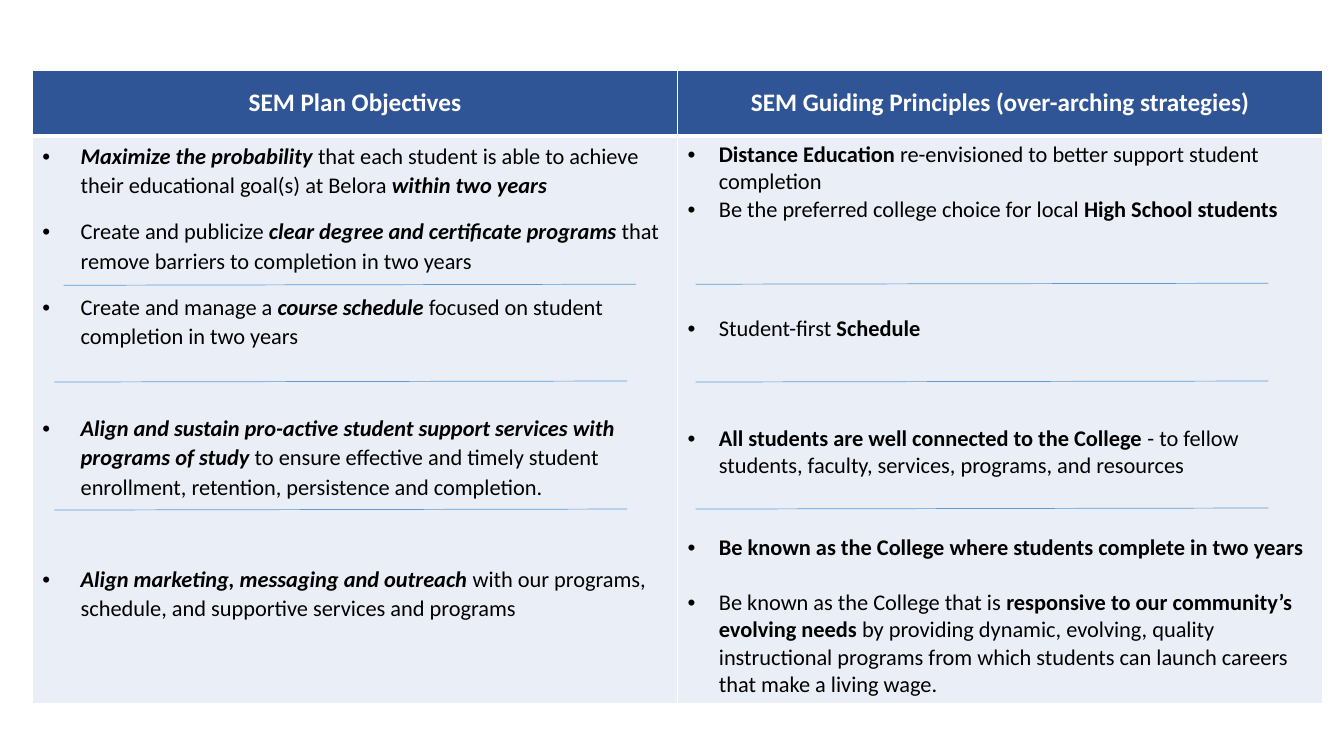
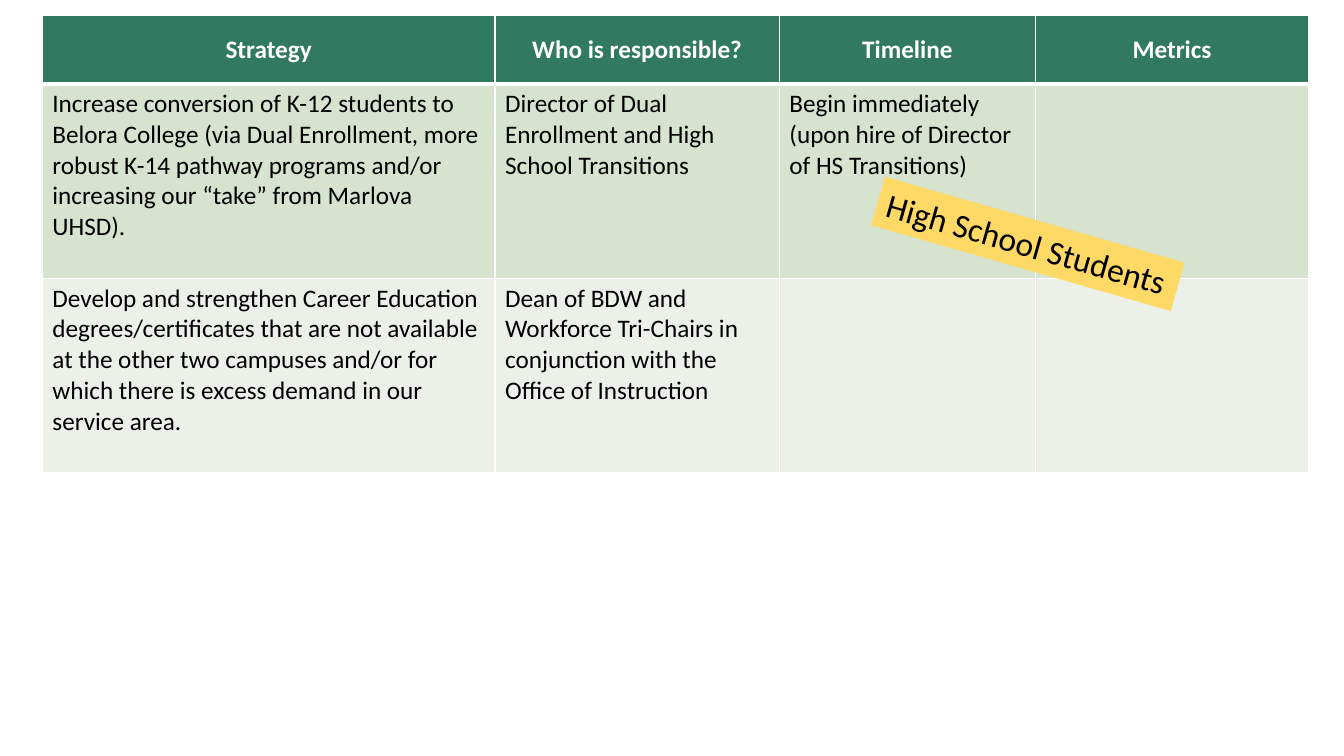
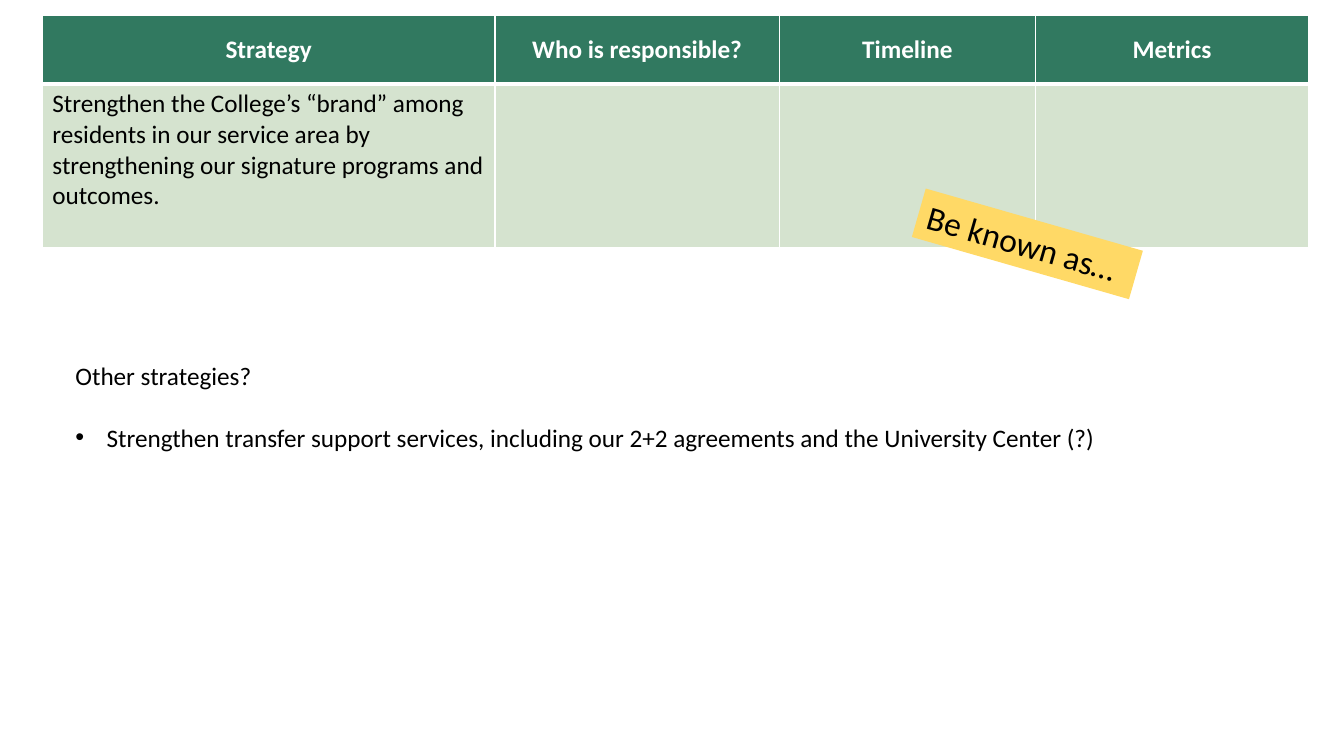
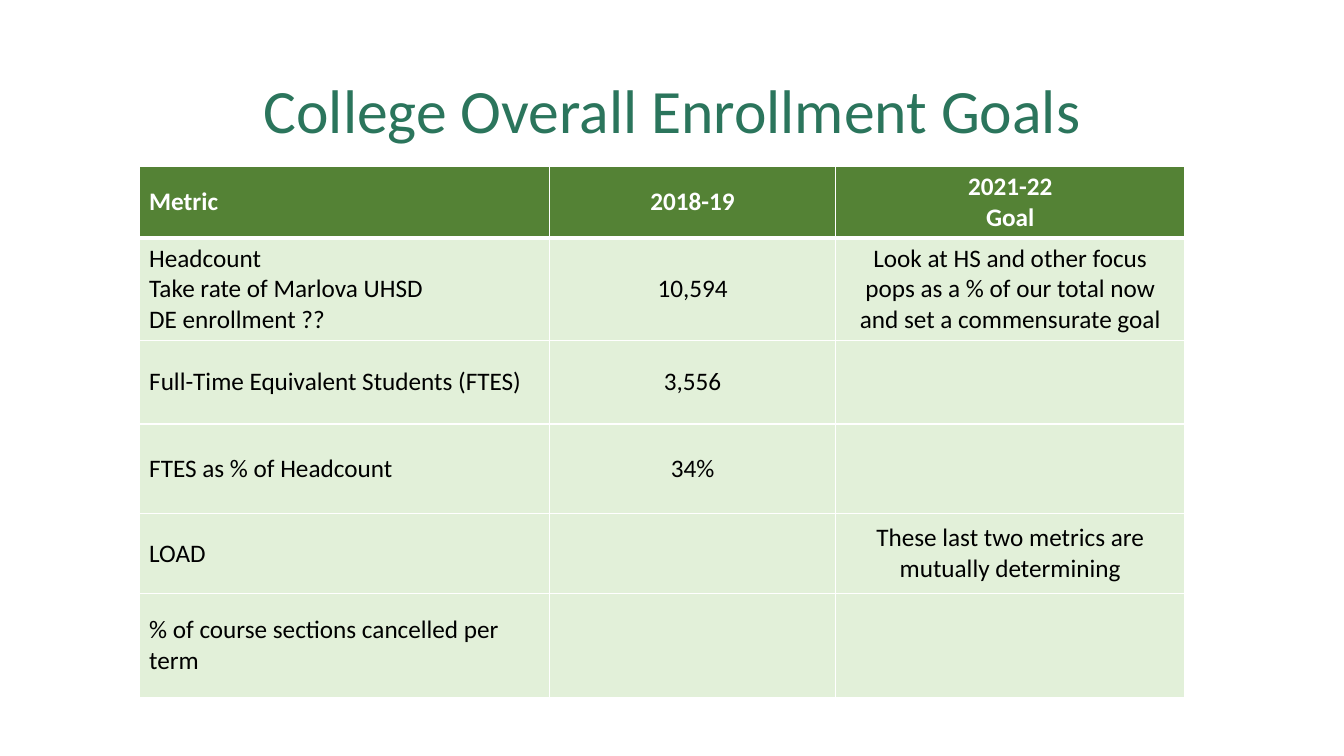
import dataclasses

import lxml.etree
import pptx
import pptx.dml.color
import pptx.enum.shapes
import pptx.enum.text
import pptx.oxml
import pptx.oxml.ns
import pptx.util

Inches = pptx.util.Inches
Pt = pptx.util.Pt
ALIGN = pptx.enum.text.PP_ALIGN
ANCHOR = pptx.enum.text.MSO_ANCHOR
qn = pptx.oxml.ns.qn


@dataclasses.dataclass(frozen=True)
class Theme:
    font: str = "Calibri"
    ink: str = "000000"
    white: str = "FFFFFF"
    title: str = "2B755C"
    navy: str = "2F5597"
    pale_blue: str = "EAEFF7"
    divider: str = "5B9BD5"
    teal: str = "317960"
    sage: str = "D5E3CF"
    pale_sage: str = "EBF1E9"
    green: str = "548235"
    pale_green: str = "E2F0D9"
    label: str = "FFD966"
    title_size: int = 44
    label_size: int = 24
    text_size: int = 18
    list_size: int = 16


theme = Theme()


def write_text(frame, text, size=theme.text_size, color=theme.ink, bold=False, italic=False,
               align=ALIGN.LEFT, anchor=ANCHOR.TOP, line_spacing=1.0, after=0, gaps=None,
               indent=0, first_bullet=0):
    frame.vertical_anchor = anchor
    for number, line in enumerate(text.split("\n")):
        para = frame.paragraphs[0] if number == 0 else frame.add_paragraph()
        para.alignment = align
        para.line_spacing = line_spacing
        para.space_before = Pt((gaps or {}).get(number, 0))
        para.space_after = Pt(after)
        if indent and number >= first_bullet:
            properties = para._p.get_or_add_pPr()
            properties.set("marL", str(Inches(indent)))
            properties.set("indent", str(Inches(-indent)))
            lxml.etree.SubElement(properties, qn("a:buFont")).set("typeface", "Arial")
            lxml.etree.SubElement(properties, qn("a:buChar")).set("char", "•")
        for position, words in enumerate(line.split("|")):
            if words:
                span = para.add_run()
                span.text = words
                marked = position % 2 == 1
                span.font.name = theme.font
                span.font.size = Pt(size)
                span.font.color.rgb = pptx.dml.color.RGBColor.from_string(color)
                span.font.bold = bold or marked
                span.font.italic = italic and marked


def add_grid(page, left, top, widths, heights, rows, header_fill, body_fills,
             body_anchor=ANCHOR.TOP, body_aligns=None, header_aligns=None):
    grid = page.shapes.add_table(len(heights), len(widths), Inches(left), Inches(top),
                                 Inches(sum(widths)), Inches(sum(heights))).table
    for column, width in zip(grid.columns, widths):
        column.width = Inches(width)
    for row, height in zip(grid.rows, heights):
        row.height = Inches(height)
    for row_number, row in enumerate(rows):
        header = row_number == 0
        fill = header_fill if header else body_fills[(row_number - 1) % len(body_fills)]
        aligns = header_aligns if header else body_aligns
        for column_number, content in enumerate(row):
            cell = grid.cell(row_number, column_number)
            cell.fill.solid()
            cell.fill.fore_color.rgb = pptx.dml.color.RGBColor.from_string(fill)
            properties = cell._tc.get_or_add_tcPr()
            edges = {"lnL": 1, "lnR": 1, "lnT": 3 if row_number == 1 else 1,
                     "lnB": 3 if header else 1}
            for position, (edge, weight) in enumerate(edges.items()):
                border = lxml.etree.Element(qn("a:" + edge), w=str(Pt(weight)))
                paint = lxml.etree.SubElement(border, qn("a:solidFill"))
                lxml.etree.SubElement(paint, qn("a:srgbClr")).set("val", theme.white)
                properties.insert(position, border)
            cell.vertical_anchor = ANCHOR.MIDDLE if header else body_anchor
            if content:
                style = dict(color=theme.white, bold=True) if header else {}
                style["align"] = aligns[column_number] if aligns else (
                    ALIGN.CENTER if header else ALIGN.LEFT)
                write_text(cell.text_frame, content, anchor=cell.vertical_anchor, **style)
    return grid


deck = pptx.Presentation()
deck.slide_width = Inches(13.33)
deck.slide_height = Inches(7.5)
title_layout, blank_layout = deck.slide_layouts[5], deck.slide_layouts[6]

page = deck.slides.add_slide(blank_layout)
objectives = "\n".join([
    "|Maximize the probability |that each student is able to achieve their educational goal(s) at Belora |within two years|",
    "Create and publicize |clear degree and certificate programs |that remove barriers to completion in two years",
    "Create and manage a |course schedule |focused on student completion in two years",
    "|Align and sustain pro-active student support services with programs of study |to ensure effective and timely student enrollment, retention, persistence and completion.",
    "|Align marketing, messaging and outreach |with our programs, schedule, and supportive services and programs",
])
principles = "\n".join([
    "|Distance Education |re-envisioned to better support student completion",
    "Be the preferred college choice for local |High School students|",
    "Student-first |Schedule|",
    "|All students are well connected to the College| - to fellow students, faculty, services, programs, and resources",
    "|Be known as the College where students complete in two years|",
    "Be known as the College that is |responsive to our community’s evolving needs| by providing dynamic, evolving, quality instructional programs from which students can launch careers that make a living wage.",
])
grid = add_grid(page, 0.32, 0.7, [6.4, 6.4], [0.65, 5.62],
                [["SEM Plan Objectives", "SEM Guiding Principles (over-arching strategies)"], ["", ""]],
                theme.navy, [theme.pale_blue])
write_text(grid.cell(1, 0).text_frame, objectives, size=theme.list_size, italic=True,
           line_spacing=1.07, after=12, gaps={3: 32.9, 4: 32.9}, indent=0.38)
write_text(grid.cell(1, 1).text_frame, principles, size=theme.list_size,
           gaps={2: 65.9, 3: 58.6, 4: 39, 5: 19.5}, indent=0.31)
for left, top in [(6.9, 2.82), (6.9, 3.79), (6.9, 5.05), (0.54, 3.79), (0.63, 2.83), (0.54, 5.06)]:
    divider = page.shapes.add_connector(pptx.enum.shapes.MSO_CONNECTOR.STRAIGHT, Inches(left),
                                        Inches(top), Inches(left + 5.68), Inches(top - 0.01))
    divider.line.color.rgb = pptx.dml.color.RGBColor.from_string(theme.divider)
    divider.line.width = Pt(0.5)
    lxml.etree.SubElement(divider._element.spPr, qn("a:effectLst"))

strategy_pages = [
    ([0.68, 1.93, 1.93], [
        ["Increase conversion of K-12 students to Belora College (via Dual Enrollment, more robust K-14 pathway programs and/or increasing our “take” from Marlova UHSD).",
         "Director of Dual Enrollment and High School Transitions",
         "Begin immediately (upon hire of Director of HS Transitions)", ""],
        ["Develop and strengthen Career Education degrees/certificates that are not available at the other two campuses and/or for which there is excess demand in our service area.",
         "Dean of BDW and Workforce Tri-Chairs in conjunction with the Office of Instruction", "", ""],
    ], "High School Students", 8.65, 3.09),
    ([0.68, 1.63], [
        ["Strengthen the College’s “brand” among residents in our service area by strengthening our signature programs and outcomes.",
         "", "", ""],
    ], "Be known as…", 9.07, 2.24),
]
for heights, strategies, label_text, label_left, label_width in strategy_pages:
    page = deck.slides.add_slide(blank_layout)
    add_grid(page, 0.42, 0.15, [4.49, 2.82, 2.54, 2.71], heights,
             [["Strategy", "Who is responsible?", "Timeline", "Metrics"]] + strategies,
             theme.teal, [theme.sage, theme.pale_sage])
    label = page.shapes.add_shape(pptx.enum.shapes.MSO_SHAPE.RECTANGLE, Inches(label_left),
                                  Inches(2.17), Inches(label_width), Inches(0.5))
    label.rotation = 16
    label.shadow.inherit = False
    label.fill.solid()
    label.fill.fore_color.rgb = pptx.dml.color.RGBColor.from_string(theme.label)
    label.line.fill.background()
    label.text_frame.word_wrap = False
    label.text_frame.auto_size = pptx.enum.text.MSO_AUTO_SIZE.SHAPE_TO_FIT_TEXT
    write_text(label.text_frame, label_text, size=theme.label_size)

box = page.shapes.add_textbox(Inches(0.65), Inches(3.53), Inches(10.44), Inches(1.31))
box.text_frame.word_wrap = True
write_text(box.text_frame,
           "Other strategies?\nStrengthen transfer support services, including our 2+2 agreements and the University Center (?)",
           gaps={1: 22}, indent=0.31, first_bullet=1)

page = deck.slides.add_slide(title_layout)
title = page.shapes.title
title.left, title.top, title.width, title.height = map(Inches, (0.92, 0.4, 11.5, 1.45))
write_text(title.text_frame, "College Overall Enrollment Goals", size=theme.title_size,
           color=theme.title, align=ALIGN.CENTER, anchor=ANCHOR.MIDDLE, line_spacing=0.9)
goal_aligns = [ALIGN.LEFT, ALIGN.CENTER, ALIGN.CENTER]
add_grid(page, 1.38, 1.65, [4.07, 2.84, 3.46], [0.7, 1.01, 0.83, 0.89, 0.79, 1.03], [
    ["Metric", "2018-19", "2021-22\nGoal"],
    ["Headcount\nTake rate of Marlova UHSD\nDE enrollment ??", "10,594",
     "Look at HS and other focus pops as a % of our total now and set a commensurate goal"],
    ["Full-Time Equivalent Students (FTES)", "3,556", ""],
    ["FTES as % of Headcount", "34%", ""],
    ["LOAD", "", "These last two metrics are mutually determining"],
    ["% of course sections cancelled per term", "", ""],
], theme.green, [theme.pale_green], body_anchor=ANCHOR.MIDDLE,
    body_aligns=goal_aligns, header_aligns=goal_aligns)

deck.save("out.pptx")
